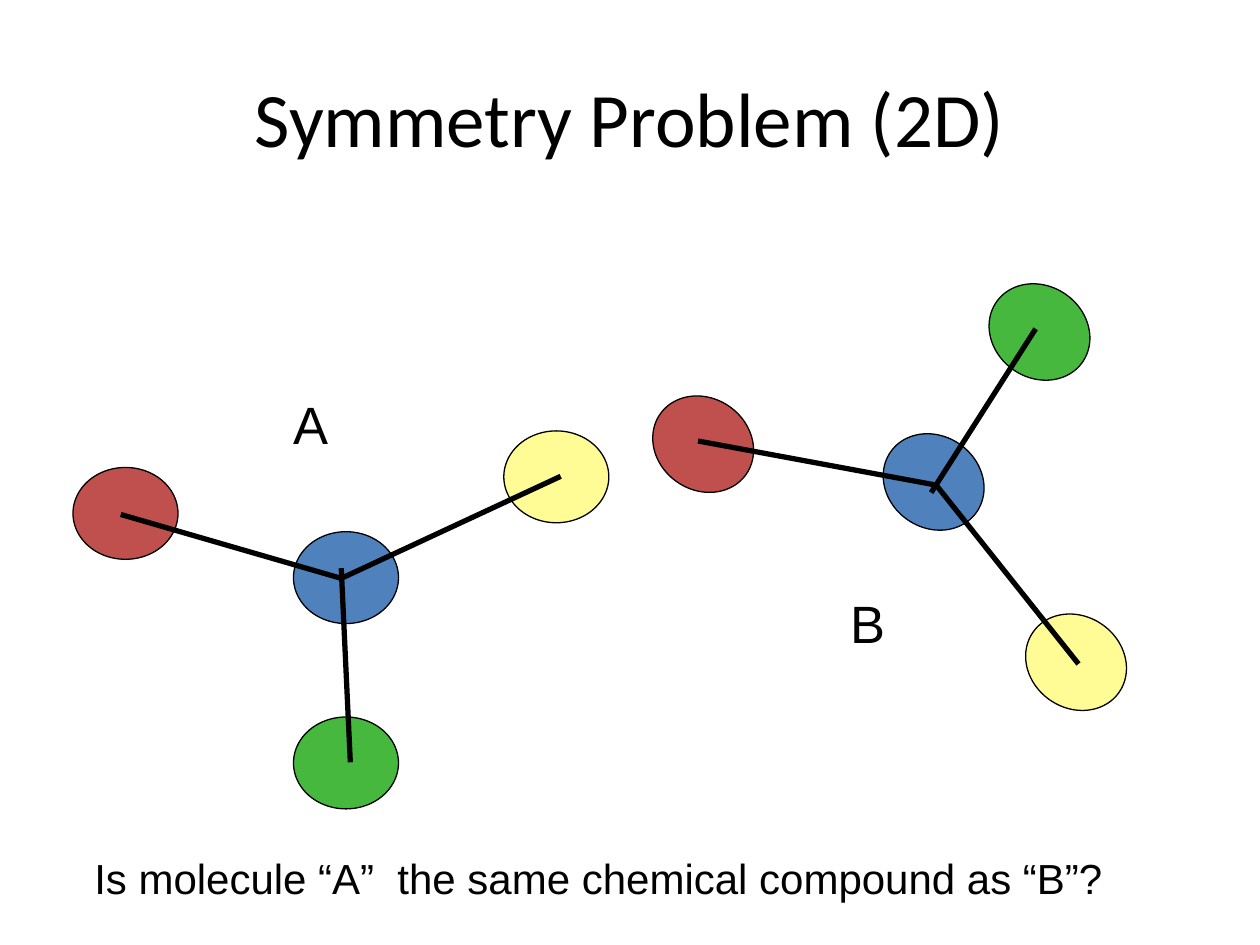
from dataclasses import dataclass

from lxml.etree import SubElement
from pptx import Presentation
from pptx.dml.color import RGBColor
from pptx.enum.shapes import MSO_CONNECTOR, MSO_SHAPE
from pptx.enum.text import MSO_ANCHOR, MSO_AUTO_SIZE, PP_ALIGN
from pptx.oxml.ns import qn
from pptx.util import Pt


@dataclass(frozen=True)
class Theme:
    """Colours, fonts and sizes of the slide."""
    ink: str = "000000"
    blue: str = "4F81BD"
    red: str = "C0504D"
    green: str = "46B83E"
    yellow: str = "FFFC95"
    title_font: str = "Calibri"
    text_font: str = "Arial"
    title_size: int = 44
    label_size: int = 30
    question_size: int = 24
    outline: float = 0.75
    bond: float = 3
    atom_width: float = 60
    atom_height: float = 52.5


THEME = Theme()

MOLECULE_A = {
    "atoms": [
        (THEME.blue, 197.7, 330.1),
        (THEME.red, 71.7, 293.4),
        (THEME.green, 197.7, 436),
        (THEME.yellow, 317.9, 272.5),
    ],
    "bonds": [
        (69, 294, 195, 330.5),
        (320.4, 272.2, 195, 330.5),
        (195, 324.7, 200.2, 435.6),
    ],
}

MOLECULE_B = {
    "atoms": [
        (THEME.blue, 533.5, 275.4),
        (THEME.yellow, 614.9, 378.4),
        (THEME.green, 594, 189.7),
        (THEME.red, 401.8, 253.8),
    ],
    "bonds": [
        (616.3, 379.4, 535, 277.2),
        (398.9, 252, 535, 277.2),
        (532.1, 281.5, 591.8, 187.9),
    ],
    "rotation": 215.2,
}


def place(shape, left, top, width, height):
    """Move and size a shape, in points."""
    shape.left, shape.top = Pt(left), Pt(top)
    shape.width, shape.height = Pt(width), Pt(height)


def style_line(line, width):
    """Draw a line in ink at the given width."""
    line.color.rgb = RGBColor.from_string(THEME.ink)
    line.width = Pt(width)


def style_text(paragraph, font_name, size):
    """Set the font of every run of a paragraph."""
    for run in paragraph.runs:
        run.font.name = font_name
        run.font.size = Pt(size)
        run.font.color.rgb = RGBColor.from_string(THEME.ink)


def add_title(slide, text):
    """Fill and place the title placeholder."""
    title = slide.shapes.title
    place(title, 36, 21.6, 648, 90)
    frame = title.text_frame
    frame.text = text
    frame.vertical_anchor = MSO_ANCHOR.MIDDLE
    frame.paragraphs[0].alignment = PP_ALIGN.CENTER
    style_text(frame.paragraphs[0], THEME.title_font, THEME.title_size)


def add_text(slide, text, left, top, width, height, size):
    """Add a single line of text that does not wrap."""
    caption = slide.shapes.add_textbox(Pt(left), Pt(top), Pt(width), Pt(height))
    frame = caption.text_frame
    frame.text = text
    frame.word_wrap = False
    frame.auto_size = MSO_AUTO_SIZE.SHAPE_TO_FIT_TEXT
    style_text(frame.paragraphs[0], THEME.text_font, size)


def add_atom(shapes, color, center_x, center_y, rotation):
    """Add an atom as an ellipse around its centre."""
    width, height = THEME.atom_width, THEME.atom_height
    atom = shapes.add_shape(
        MSO_SHAPE.OVAL,
        Pt(center_x - width / 2), Pt(center_y - height / 2), Pt(width), Pt(height),
    )
    atom.rotation = rotation
    atom.shadow.inherit = False
    atom.fill.solid()
    atom.fill.fore_color.rgb = RGBColor.from_string(color)
    style_line(atom.line, THEME.outline)


def add_bond(shapes, *ends):
    """Add a bond as a straight line without a shadow."""
    bond = shapes.add_connector(MSO_CONNECTOR.STRAIGHT, *map(Pt, ends))
    style_line(bond.line, THEME.bond)
    SubElement(bond._element.spPr, qn("a:effectLst"))


def add_molecule(shapes, atoms, bonds, rotation=0):
    """Add the atoms of a molecule and the bonds over them."""
    for color, center_x, center_y in atoms:
        add_atom(shapes, color, center_x, center_y, rotation)
    for ends in bonds:
        add_bond(shapes, *ends)


def main():
    """Build and save the slide."""
    presentation = Presentation()
    presentation.slide_width, presentation.slide_height = Pt(720), Pt(540)
    slide = presentation.slides.add_slide(presentation.slide_layouts.get_by_name("Title Only"))
    add_title(slide, "Symmetry Problem (2D)")
    add_molecule(slide.shapes.add_group_shape().shapes, **MOLECULE_A)
    add_molecule(slide.shapes, **MOLECULE_B)
    add_text(slide, "A", 160.5, 220.3, 34.5, 43.2, THEME.label_size)
    add_text(slide, "B", 478.8, 334.1, 34.5, 43.2, THEME.label_size)
    add_text(
        slide, "Is molecule “A”  the same chemical compound as “B”?",
        46.8, 483.8, 597.6, 36, THEME.question_size,
    )
    presentation.save("out.pptx")


if __name__ == "__main__":
    main()
